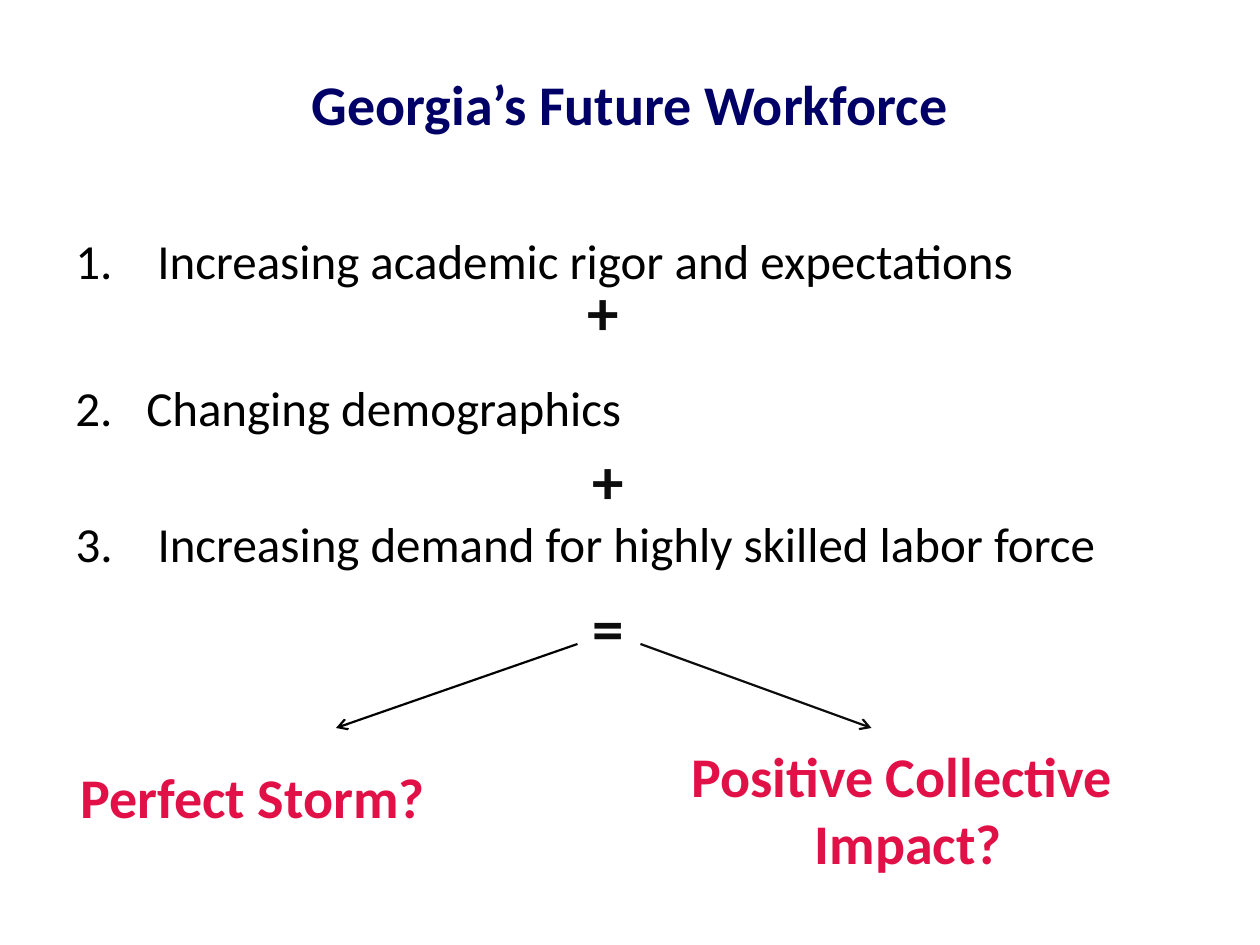
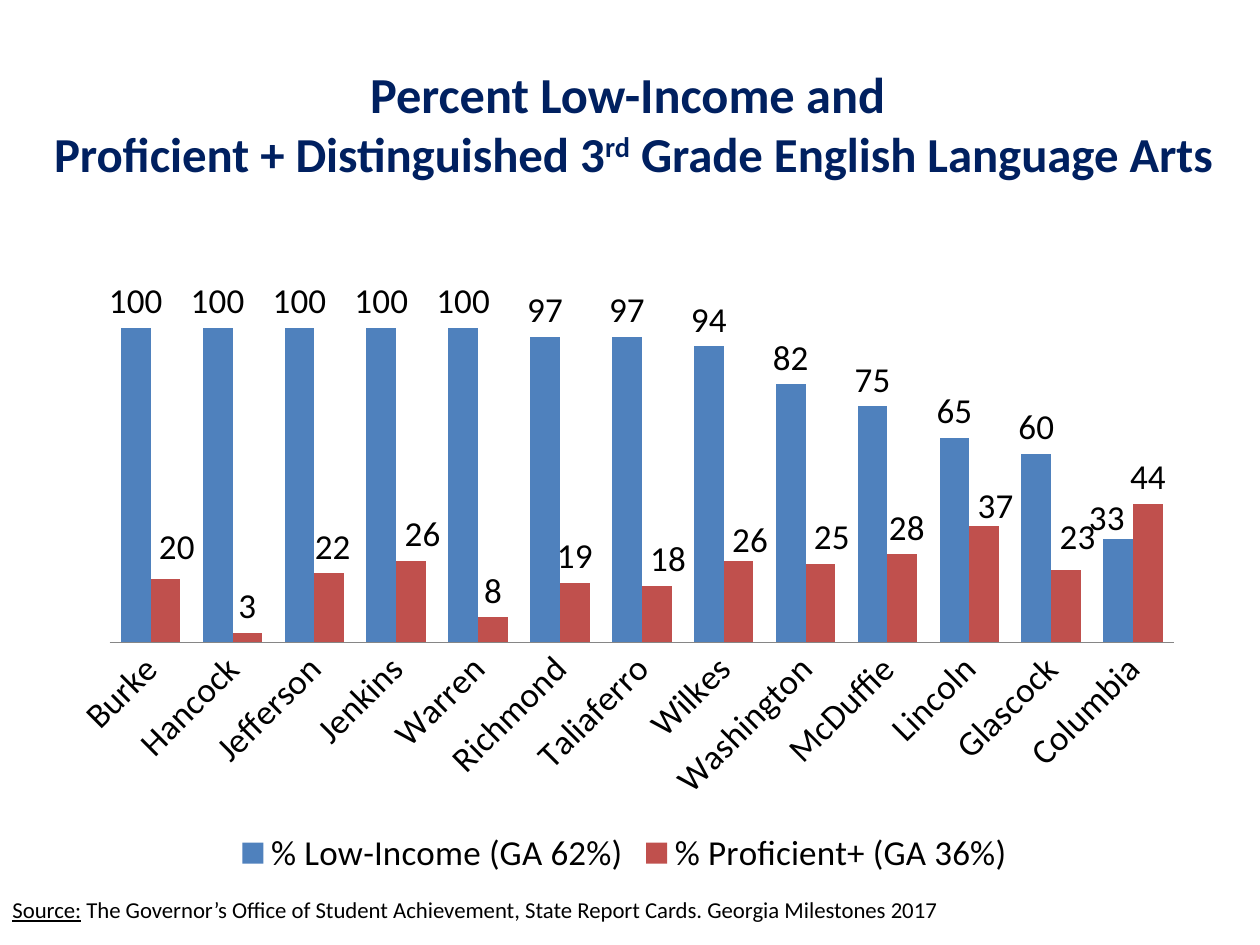
from copy import deepcopy

from lxml.etree import SubElement
from pptx import Presentation
from pptx.chart.data import CategoryChartData
from pptx.dml.color import RGBColor
from pptx.enum.chart import (XL_CHART_TYPE, XL_LABEL_POSITION,
                             XL_LEGEND_POSITION, XL_TICK_MARK)
from pptx.enum.shapes import MSO_CONNECTOR
from pptx.enum.text import MSO_ANCHOR, MSO_AUTO_SIZE, PP_ALIGN
from pptx.oxml.ns import qn
from pptx.util import Pt

FONT = "Calibri"
BLACK, SOFT_BLACK = "000000", "0D0D0D"
NAVY, DEEP_BLUE, CRIMSON = "000066", "002060", "E11148"
BAR_BLUE, BAR_RED, AXIS_GREY = "4F81BD", "C0504D", "868686"
TITLE_AND_CONTENT, TITLE_ONLY = 1, 5
CENTER, LEFT = PP_ALIGN.CENTER, PP_ALIGN.LEFT

COUNTIES = ["Burke", "Hancock", "Jefferson", "Jenkins", "Warren", "Richmond",
            "Taliaferro", "Wilkes", "Washington", "McDuffie", "Lincoln",
            "Glascock", "Columbia"]
SERIES = [
    ("% Low-Income (GA 62%)", BAR_BLUE,
     [100, 100, 100, 100, 100, 97, 97, 94, 82, 75, 65, 60, 33],
     {12: (-0.01, 0.01)}),
    ("% Proficient+ (GA 36%)", BAR_RED,
     [20, 3, 22, 26, 8, 19, 18, 26, 25, 28, 37, 23, 44],
     {0: (0.01, -0.01), 2: (0.003, 0), 3: (0.01, 0), 6: (0.01, 0),
      7: (0.01, 0.01), 8: (0.01, 0), 9: (0.004, 0),
      10: (0.01, 0.01), 11: (0.01, -0.01)}),
]


def rgb(color):
    return RGBColor.from_string(color)


def add_layout(parent, index, **values):
    layout = parent.makeelement(qn("c:layout"))
    manual = SubElement(layout, qn("c:manualLayout"))
    for tag, value in values.items():
        SubElement(manual, qn(f"c:{tag}")).set("val", str(value))
    parent.insert(index, layout)


class Deck:
    """Hold the shared style and the current slide."""

    def __init__(self):
        self.prs = Presentation()
        self.prs.slide_width, self.prs.slide_height = Pt(720), Pt(540)

    def new_slide(self, layout):
        self.s = self.prs.slides.add_slide(self.prs.slide_layouts[layout])
        self.s.background.fill.solid()
        self.s.background.fill.fore_color.rgb = rgb("FFFFFF")

    def place(self, sp, box):
        sp.left, sp.top, sp.width, sp.height = (Pt(v) for v in box)

    def style(self, font, size, color=BLACK, bold=None):
        font.name, font.size, font.bold = FONT, Pt(size), bold
        font.color.rgb = rgb(color)

    def fill_text(self, tf, text, size, color=BLACK, bold=False, align=LEFT):
        tf.text = text
        tf.auto_size = MSO_AUTO_SIZE.NONE
        for p in tf.paragraphs:
            p.alignment = align
            for r in p.runs:
                self.style(r.font, size, color, bold)

    def title(self, box, text, size, color):
        sp = self.s.shapes.title
        self.place(sp, box)
        tf = sp.text_frame
        tf.vertical_anchor = MSO_ANCHOR.MIDDLE
        self.fill_text(tf, text, size, color, True, CENTER)
        return tf.paragraphs[0]

    def text(self, box, text, size, color=BLACK, bold=False, align=LEFT,
             wrap=True):
        sp = self.s.shapes.add_textbox(*(Pt(v) for v in box))
        sp.text_frame.word_wrap = wrap
        self.fill_text(sp.text_frame, text, size, color, bold, align)
        return sp.text_frame.paragraphs[0]

    def hang(self, p, indent=40.5):
        pPr = p._p.get_or_add_pPr()
        pPr.set("marL", str(Pt(indent)))
        pPr.set("indent", str(Pt(-indent)))

    def item(self, box, text):
        self.hang(self.text(box, text, 28))

    def body_item(self, box, text):
        sp = self.s.placeholders[1]
        self.place(sp, box)
        self.fill_text(sp.text_frame, text, 28)
        p = sp.text_frame.paragraphs[0]
        self.hang(p)
        SubElement(p._p.get_or_add_pPr(), qn("a:buNone"))

    def arrow(self, start, end, color):
        ends = (Pt(v) for v in start + end)
        line = self.s.shapes.add_connector(MSO_CONNECTOR.STRAIGHT, *ends)
        line.line.width = Pt(1.25)
        line.line.color.rgb = rgb(color)
        ln = line._element.spPr.find(qn("a:ln"))
        SubElement(ln, qn("a:tailEnd")).set("type", "arrow")
        SubElement(line._element.spPr, qn("a:effectLst"))

    def column_chart(self, box, categories, series):
        data = CategoryChartData(number_format="0")
        data.categories = categories
        for name, _, values, _ in series:
            data.add_series(name, values)
        frame = self.s.shapes.add_chart(
            XL_CHART_TYPE.COLUMN_CLUSTERED, *(Pt(v) for v in box), data)
        chart = frame.chart
        chart.has_title = False
        self.style(chart.font, 20)
        self.axes(chart)
        chart.has_legend = True
        chart.legend.position = XL_LEGEND_POSITION.BOTTOM
        chart.legend.include_in_layout = False
        self.style(chart.legend.font, 20)
        plot = chart.plots[0]
        plot.gap_width, plot.overlap, plot.vary_by_categories = 75, 0, False
        for bars, (_, color, _, nudges) in zip(plot.series, series):
            self.bars(bars, color, nudges)
        area = chart._chartSpace.chart.plotArea
        for old in area.findall(qn("c:layout")):
            area.remove(old)
        add_layout(area, 0, layoutTarget="inner", xMode="edge", yMode="edge",
                   x=0.05, y=0.02, w=0.93, h=0.6)

    def axes(self, chart):
        values, names = chart.value_axis, chart.category_axis
        values.visible = values.has_major_gridlines = False
        values.minimum_scale, values.maximum_scale = 0, 120
        names.major_tick_mark = names.minor_tick_mark = XL_TICK_MARK.NONE
        names.format.line.color.rgb = rgb(AXIS_GREY)
        self.style(names.tick_labels.font, 20)
        body = names._element.find(qn("c:txPr")).find(qn("a:bodyPr"))
        body.set("rot", "-2700000")

    def bars(self, bars, color, nudges):
        bars.format.fill.solid()
        bars.format.fill.fore_color.rgb = rgb(color)
        labels = bars.data_labels
        labels.show_value = True
        labels.number_format, labels.number_format_is_linked = "0", False
        labels.position = XL_LABEL_POSITION.OUTSIDE_END
        self.style(labels.font, 20)
        for point, (dx, dy) in nudges.items():
            label = bars.points[point].data_label
            self.style(label.font, 20)
            label.position = XL_LABEL_POSITION.OUTSIDE_END
            add_layout(label._dLbl, 1, x=dx, y=dy)


def workforce_slide(deck):
    deck.new_slide(TITLE_AND_CONTENT)
    deck.body_item((36, 290, 648, 48),
                   "3.\t Increasing demand for highly skilled labor force")
    deck.title((0, 36, 720, 46), "Georgia’s Future Workforce", 32, NAVY)
    deck.item((36, 128, 636, 41),
              "1.\t Increasing academic rigor and expectations")
    deck.item((36, 212.4, 660, 41), "2.\tChanging demographics")
    for sign, left, top in (("+", 328.6, 152), ("+", 331.2, 249), ("=", 331.2, 332.6)):
        deck.text((left, top, 32.4, 51), sign, 36, SOFT_BLACK, True, CENTER, False)
    deck.arrow((330, 368), (192, 416), BLACK)
    deck.arrow((366, 368), (498, 416), SOFT_BLACK)
    deck.text((39, 432, 228, 46), "Perfect Storm?", 32, CRIMSON, True)
    deck.text((306, 420, 426, 85), "Positive Collective \nImpact?", 32,
              CRIMSON, True, CENTER)


def chart_slide(deck):
    deck.new_slide(TITLE_ONLY)
    p = deck.title((18, 18, 688, 104.4), "Percent Low-Income and \v", 28.8, DEEP_BLUE)
    p._p.find(qn("a:br")).insert(0, deepcopy(p.runs[0]._r.rPr))
    for text, baseline in (("Proficient + Distinguished 3", 0), ("rd", 30000),
                           (" Grade English Language Arts", 0)):
        r = p.add_run()
        r.text = text
        deck.style(r.font, 27.9, DEEP_BLUE, True)
        r._r.rPr.set("baseline", str(baseline))
    p = deck.text((0, 514, 630, 18), "Source:", 13)
    p.line_spacing = 0.6
    p.runs[0].font.underline = True
    r = p.add_run()
    r.text = (" The Governor’s Office of Student Achievement, State Report "
              "Cards. Georgia Milestones 2017")
    deck.style(r.font, 13)
    deck.column_chart((30, 144, 654, 360), COUNTIES, SERIES)


def main():
    deck = Deck()
    workforce_slide(deck)
    chart_slide(deck)
    deck.prs.save("out.pptx")


if __name__ == "__main__":
    main()
